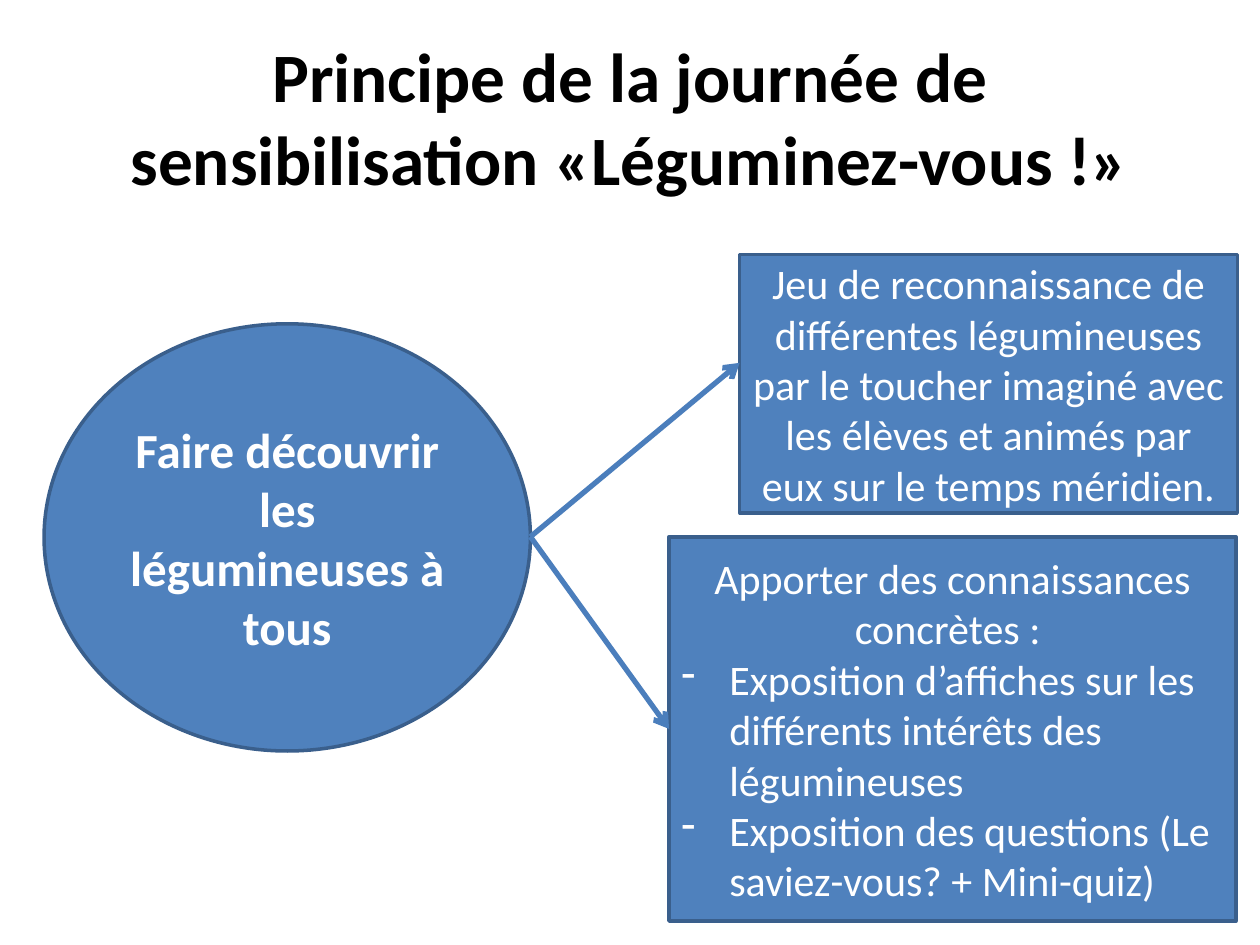
from dataclasses import dataclass

from lxml import etree
from pptx import Presentation
from pptx.dml.color import RGBColor
from pptx.enum.shapes import MSO_CONNECTOR, MSO_SHAPE
from pptx.enum.text import MSO_ANCHOR, PP_ALIGN
from pptx.oxml.ns import qn
from pptx.util import Inches, Pt

ELLIPSE, RECTANGLE = MSO_SHAPE.OVAL, MSO_SHAPE.RECTANGLE
STRAIGHT = MSO_CONNECTOR.STRAIGHT
CENTER, LEFT = PP_ALIGN.CENTER, PP_ALIGN.LEFT
MIDDLE = MSO_ANCHOR.MIDDLE
LEFT_SIDE = 1


@dataclass(frozen=True)
class Theme:
    font: str = "Calibri"
    ink: str = "000000"
    light: str = "FFFFFF"
    fill: str = "4F81BD"
    border: str = "3A5F8C"
    arrow: str = "4B7EBC"
    title_size: float = 39.6
    goal_size: float = 28
    body_size: float = 24
    border_width: float = 2
    arrow_width: float = 3
    bullet_indent: float = 0.38


def write(frame, lines, *, size, color, font, bold=False, bullet_indent=0):
    """Fill a text frame; lines that start with "- " become bullets."""
    frame.word_wrap = True
    frame.vertical_anchor = MIDDLE
    for index, line in enumerate(lines):
        paragraph = frame.paragraphs[0] if index == 0 else frame.add_paragraph()
        bulleted = line.startswith("- ")
        paragraph.alignment = LEFT if bulleted else CENTER
        if bulleted:
            properties = paragraph._p.get_or_add_pPr()
            properties.set("marL", str(Inches(bullet_indent)))
            properties.set("indent", str(-Inches(bullet_indent)))
            etree.SubElement(properties, qn("a:buChar"), char="-")
        run = paragraph.add_run()
        run.text = line.removeprefix("- ")
        run.font.name = font
        run.font.size = Pt(size)
        run.font.bold = bold
        run.font.color.rgb = RGBColor.from_string(color)


class SlideBuilder:
    """Places elements on a grid of 100 columns by 75 rows."""

    COLUMNS, ROWS = 100, 75

    def __init__(self, presentation, theme):
        self.theme = theme
        self.slide = presentation.slides.add_slide(presentation.slide_layouts[6])
        self.column = presentation.slide_width / self.COLUMNS
        self.row = presentation.slide_height / self.ROWS

    def place(self, *cells):
        """Turn alternating columns and rows into lengths."""
        return [round(cell * (self.row if index % 2 else self.column))
                for index, cell in enumerate(cells)]

    def title(self, text, area):
        box = self.slide.shapes.add_textbox(*self.place(*area))
        write(box.text_frame, [text], size=self.theme.title_size,
              color=self.theme.ink, font=self.theme.font, bold=True)

    def panel(self, kind, area, lines, size, bold=False):
        theme = self.theme
        shape = self.slide.shapes.add_shape(kind, *self.place(*area))
        shape.shadow.inherit = False
        shape.fill.solid()
        shape.fill.fore_color.rgb = RGBColor.from_string(theme.fill)
        shape.line.color.rgb = RGBColor.from_string(theme.border)
        shape.line.width = Pt(theme.border_width)
        write(shape.text_frame, lines, size=size, color=theme.light,
              font=theme.font, bold=bold, bullet_indent=theme.bullet_indent)
        return shape

    def arrow(self, start, end, target=None):
        connector = self.slide.shapes.add_connector(
            STRAIGHT, *self.place(*start, *end))
        if target is not None:
            connector.end_connect(target, LEFT_SIDE)
        connector.line.color.rgb = RGBColor.from_string(self.theme.arrow)
        connector.line.width = Pt(self.theme.arrow_width)
        etree.SubElement(connector.line._get_or_add_ln(), qn("a:tailEnd"), type="arrow")
        etree.SubElement(connector._element.spPr, qn("a:effectLst"))


def main():
    presentation = Presentation()
    presentation.slide_width = Inches(10)
    presentation.slide_height = Inches(7.5)
    theme = Theme()
    builder = SlideBuilder(presentation, theme)

    # Title
    builder.title("Principe de la journée de sensibilisation «Léguminez-vous !»",
                  (5, 3, 90, 12.5))

    # Goal of the day
    builder.panel(ELLIPSE, (3.5, 25.7, 38.6, 33.9),
                  ["Faire découvrir les légumineuses à tous"],
                  theme.goal_size, bold=True)

    # Activities
    builder.panel(RECTANGLE, (58.7, 20.2, 39.5, 20.5), [
        "Jeu de reconnaissance de différentes légumineuses par le toucher "
        "imaginé avec les élèves et animés par eux sur le temps méridien.",
    ], theme.body_size)
    knowledge = builder.panel(RECTANGLE, (53.1, 42.6, 45, 30.5), [
        "Apporter des connaissances concrètes : ",
        "- Exposition d’affiches sur les différents intérêts des légumineuses",
        "- Exposition des questions (Le saviez-vous? + Mini-quiz)",
    ], theme.body_size)

    # Arrows from the goal to the activities
    goal_edge = (42.1, 42.6)
    builder.arrow(goal_edge, (58.7, 28.8))
    builder.arrow(goal_edge, (53.1, 57.9), knowledge)

    presentation.save("out.pptx")


if __name__ == "__main__":
    main()
